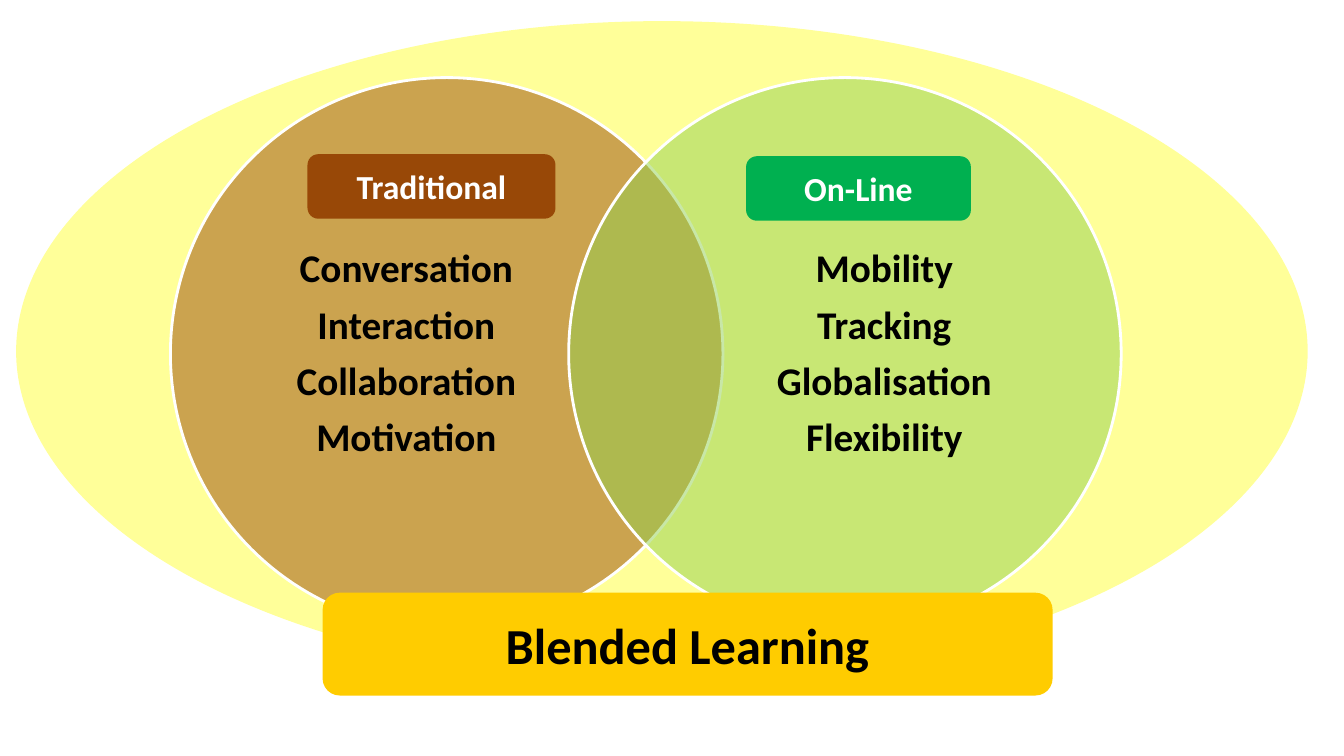
import dataclasses

import lxml.etree
import pptx
import pptx.dml.color
import pptx.enum.shapes
import pptx.enum.text
import pptx.oxml.ns
import pptx.util

PX = 9144  # EMU in one px, at 100 px to the inch
SHAPES = pptx.enum.shapes.MSO_SHAPE


@dataclasses.dataclass(frozen=True)
class Theme:
    font: str = "Calibri"
    dark: str = "000000"
    light: str = "FFFFFF"
    backdrop: str = "FFFF99"
    brown: str = "984807"
    lime: str = "92D050"
    green: str = "00B050"
    gold: str = "FFCC00"
    label_size: int = 24
    list_size: int = 28
    banner_size: int = 36


THEME = Theme()


@dataclasses.dataclass(frozen=True)
class Box:
    left: int
    top: int
    width: int
    height: int

    def inner(self, left, top, width, height):
        return Box(self.left + left, self.top + top, width, height)

    def emu(self):
        return [n * PX for n in (self.left, self.top, self.width, self.height)]


def rgb(value):
    return pptx.dml.color.RGBColor.from_string(value)


def add_filled(page, kind, box, color):
    shape = page.shapes.add_shape(kind, *box.emu())
    shape.shadow.inherit = False
    shape.fill.solid()
    shape.fill.fore_color.rgb = rgb(color)
    shape.line.fill.background()
    return shape


def write_lines(shape, lines, size, color):
    """Write centred bold paragraphs and return them."""
    frame = shape.text_frame
    frame.word_wrap = True
    frame.vertical_anchor = pptx.enum.text.MSO_ANCHOR.MIDDLE
    for index, line in enumerate(lines):
        para = frame.add_paragraph() if index else frame.paragraphs[0]
        para.alignment = pptx.enum.text.PP_ALIGN.CENTER
        span = para.add_run()
        span.text = line
        span.font.name = THEME.font
        span.font.size = pptx.util.Pt(size)
        span.font.bold = True
        span.font.color.rgb = rgb(color)
    return frame.paragraphs


def add_plate(page, box, color, text, size, text_color):
    plate = add_filled(page, SHAPES.ROUNDED_RECTANGLE, box, color)
    write_lines(plate, [text], size, text_color)


def add_disc(page, box, color):
    """Half-transparent circle with a white outline."""
    disc = add_filled(page, SHAPES.OVAL, box, color)
    disc.line.color.rgb = rgb(THEME.light)
    disc.line.width = pptx.util.Pt(2)
    qn = pptx.oxml.ns.qn
    tint = disc.fill._xPr.find(qn("a:solidFill")).find(qn("a:srgbClr"))
    lxml.etree.SubElement(tint, qn("a:alpha")).set("val", "50000")


def add_strengths(page, box, lines):
    holder = page.shapes.add_textbox(*box.emu())
    frame = holder.text_frame
    frame.margin_left = frame.margin_right = 0
    frame.margin_top = frame.margin_bottom = 0
    for para in write_lines(holder, lines, THEME.list_size, THEME.dark):
        para.line_spacing = 0.9
        para.space_after = pptx.util.Pt(0.35 * THEME.list_size)


def add_circle(page, box, color, list_left, strengths):
    """One side of the Venn diagram: the disc and its list."""
    add_disc(page, box, color)
    add_strengths(page, box.inner(list_left, 65, 316, 419), strengths)


def build_venn_slide(page, box):
    # Backdrop
    add_filled(page, SHAPES.OVAL, box.inner(16, 21, 1281, 655), THEME.backdrop)

    # Overlapping circles
    traditional = box.inner(169, 77, 548, 548)
    online = box.inner(564, 77, 548, 548)
    add_circle(page, traditional, THEME.brown, 76,
               ["Conversation", "Interaction", "Collaboration", "Motivation"])
    add_circle(page, online, THEME.lime, 155,
               ["Mobility", "Tracking", "Globalisation", "Flexibility"])

    # Circle labels
    add_plate(page, traditional.inner(136, 76, 246, 64), THEME.brown,
              "Traditional", THEME.label_size, THEME.light)
    add_plate(page, online.inner(176, 78, 223, 64), THEME.green,
              "On-Line", THEME.label_size, THEME.light)

    # Banner
    add_plate(page, box.inner(320, 588, 724, 102), THEME.gold,
              "Blended Learning", THEME.banner_size, THEME.dark)


def main():
    deck = pptx.Presentation()
    canvas = Box(0, 0, 1333, 750)
    deck.slide_width = canvas.width * PX
    deck.slide_height = canvas.height * PX
    page = deck.slides.add_slide(deck.slide_layouts.get_by_name("Blank"))
    build_venn_slide(page, canvas)
    deck.save("out.pptx")


if __name__ == "__main__":
    main()
